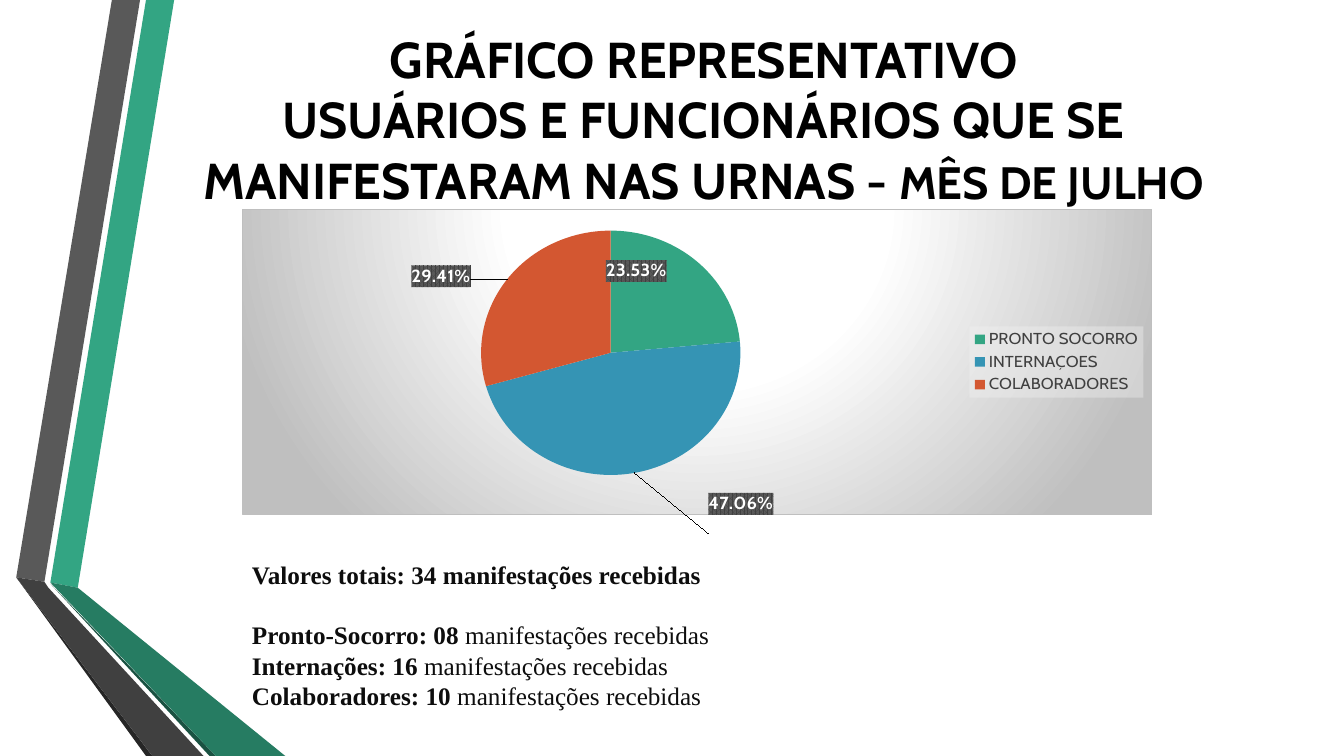
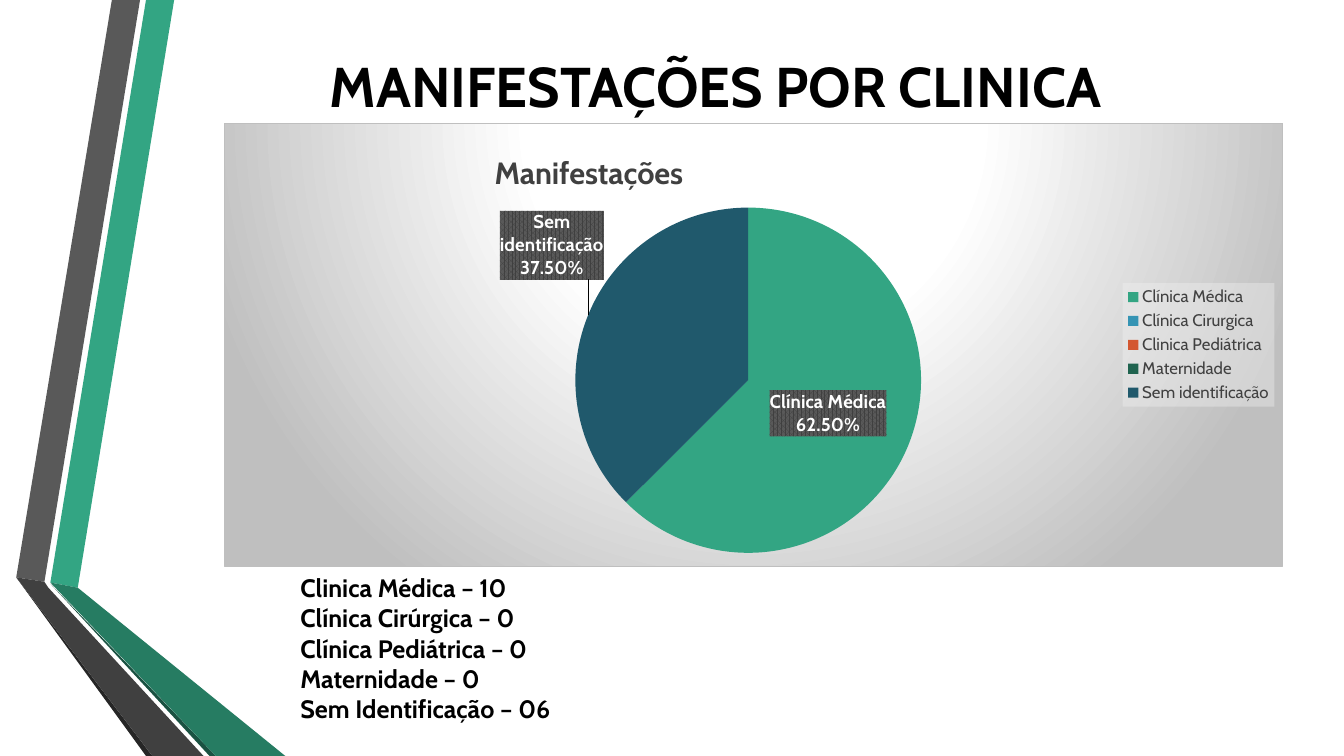
import copy
from dataclasses import dataclass

import pptx
import pptx.chart.data
import pptx.dml.color
import pptx.enum.chart
import pptx.enum.text
import pptx.oxml
import pptx.oxml.ns
import pptx.util

Cm = pptx.util.Cm
Pt = pptx.util.Pt
qn = pptx.oxml.ns.qn
NS = pptx.oxml.ns.nsdecls("c", "a")
ALIGN = pptx.enum.text.PP_ALIGN


@dataclass(frozen=True)
class Theme:
    """Colours, fonts and type sizes of the deck."""
    font: str = "Cabin"
    serif: str = "Times New Roman"
    black: str = "000000"
    ink: str = "0D0D0D"
    grey: str = "404040"
    white: str = "FFFFFF"
    silver: str = "BFBFBF"
    legend_back: str = "F2F2F2"
    label_back: str = "595959"
    slices: tuple = ("33A583", "3594B4", "D35731", "1F634F", "20596C")
    title: float = 40
    long_title: float = 36
    title_tail: float = 32.4
    chart_title: float = 22
    body: float = 18
    label: float = 13.3
    legend: float = 12
    chart: float = 10


RIBBONS = (
    ("33A583", ((1.27, 14.68), (1.96, 14.81), (4.39, 0), (3.68, 0))),
    ("595959", ((3.53, 0), (2.82, 0), (0.41, 14.55), (1.12, 14.66))),
    ("262626", ((0.41, 14.55), (3.68, 19.05), (3.84, 19.05))),
    ("1A5242", ((1.27, 14.71), (5.28, 19.05), (5.44, 19.05))),
    ("267C62", ((1.27, 14.68), (5.44, 19.05), (7.19, 19.05), (1.96, 14.81))),
    ("404040", ((5.13, 19.05), (1.22, 14.81), (1.12, 14.66), (0.41, 14.55),
                (3.84, 19.05))),
)


def rgb(value):
    """Turn a hex string into a colour."""
    return pptx.dml.color.RGBColor.from_string(value)


def style(font, size, color, name, bold=None):
    """Format a font."""
    font.size, font.name, font.bold = Pt(size), name, bold
    font.color.rgb = rgb(color)


def xml(tag, inner):
    """Build a chart element from its inner XML."""
    return pptx.oxml.parse_xml(f"<c:{tag} {NS}>{inner}</c:{tag}>")


def solid(color, tag="srgbClr", inner=""):
    """Return the XML of a colour."""
    return f'<a:{tag} val="{color}">{inner}</a:{tag}>'


def place(parent, index, x, y, w=None, h=None):
    """Give a chart part a manual layout in fractions of the chart."""
    for old in parent.findall(qn("c:layout")):
        parent.remove(old)
    inner, modes = "", ""
    if w:
        inner = '<c:layoutTarget val="inner"/>'
    if w or parent.tag == qn("c:title"):
        modes = '<c:xMode val="edge"/><c:yMode val="edge"/>'
    sizes = f'<c:w val="{w}"/><c:h val="{h}"/>' if w else ""
    parent.insert(index, xml("layout", f'<c:manualLayout>{inner}{modes}'
                             f'<c:x val="{x}"/><c:y val="{y}"/>{sizes}</c:manualLayout>'))


class Deck:
    """Hold the theme and the current slide, and add elements to it."""

    def __init__(self, theme):
        """Start a widescreen presentation."""
        self.theme = theme
        self.prs = pptx.Presentation()
        self.prs.slide_width, self.prs.slide_height = Cm(33.87), Cm(19.05)
        self.layout = self.prs.slide_layouts[5]
        self.s = None

    def slide(self):
        """Add a slide, decorating the layout the first time."""
        first = self.s is None
        self.s = self.prs.slides.add_slide(self.layout)
        if first:
            self.ribbons()

    def ribbons(self):
        """Draw the folded ribbons and move them to the layout."""
        for i, (color, points) in enumerate(RIBBONS):
            points = [(Cm(x), Cm(y)) for x, y in points]
            builder = self.s.shapes.build_freeform(*points[0])
            builder.add_line_segments(points[1:], close=True)
            sp = builder.convert_to_shape()
            sp.shadow.inherit = False
            sp.fill.solid()
            sp.fill.fore_color.rgb = rgb(color)
            sp.line.fill.background()
            self.layout.shapes.element.insert(2 + i, sp.element)

    def title(self, box, lines, size, tail=""):
        """Fill the title placeholder, with an optional smaller tail."""
        sp = self.s.shapes.title
        sp.left, sp.top, sp.width, sp.height = map(Cm, box)
        tf = sp.text_frame
        tf.word_wrap = True
        tf.auto_size = pptx.enum.text.MSO_AUTO_SIZE.NONE
        tf.vertical_anchor = pptx.enum.text.MSO_ANCHOR.MIDDLE
        p = tf.paragraphs[0]
        p.alignment = ALIGN.CENTER
        style(p.font, size, self.theme.black, self.theme.font, True)
        for i, line in enumerate(lines):
            if i:
                p.add_line_break()
            p.add_run().text = line
        if tail:
            r = p.add_run()
            r.text = tail
            r.font.size = Pt(self.theme.title_tail)

    def text(self, box, rows, color, name, align=ALIGN.LEFT, lead_gap=0):
        """Add rows of bold text, each with an optional plain ending."""
        tf = self.s.shapes.add_textbox(*map(Cm, box)).text_frame
        tf.word_wrap = True
        for i, (strong, plain) in enumerate(rows):
            p = tf.add_paragraph() if i else tf.paragraphs[0]
            p.alignment = align
            p.space_after = Pt(0 if i else lead_gap)
            style(p.font, self.theme.body, color, name, True)
            p.add_run().text = strong
            if plain:
                r = p.add_run()
                r.text = plain
                r.font.bold = False

    def pie(self, box, name, data, plot_box, offsets, title_at=None):
        """Add a pie chart; offsets move its labels, None hides one."""
        t = self.theme
        cd = pptx.chart.data.CategoryChartData()
        cd.categories = list(data)
        cd.add_series(name, list(data.values()))
        kinds = pptx.enum.chart
        chart = self.s.shapes.add_chart(kinds.XL_CHART_TYPE.PIE, *map(Cm, box), cd).chart
        style(chart.font, t.chart, t.black, t.font)
        chart.has_title = title_at is not None
        if title_at:
            tf = chart.chart_title.text_frame
            tf.text = name
            style(tf.paragraphs[0].runs[0].font, t.chart_title, t.grey, t.font, True)
            place(chart.element.xpath(".//c:title")[0], 1, *title_at)
        chart.has_legend = True
        chart.legend.position = kinds.XL_LEGEND_POSITION.RIGHT
        chart.legend.include_in_layout = False
        style(chart.legend.font, t.legend, t.grey, t.font)
        plot = chart.plots[0]
        plot.vary_by_categories = True
        for i, color in enumerate(t.slices[:len(data)]):
            fill = plot.series[0].points[i].format.fill
            fill.solid()
            fill.fore_color.rgb = rgb(color)
        place(chart.element.xpath(".//c:plotArea")[0], 0, *plot_box)
        self.chart_back(chart)
        self.labels(plot.series[0], chart, offsets, title_at is not None)

    def chart_back(self, chart):
        """Paint the chart area and the legend."""
        t = self.theme
        stops = "".join(f'<a:gs pos="{pos}000">{solid(color)}</a:gs>' for pos, color in
                        ((0, t.white), (39, t.white), (100, t.silver)))
        area = (f'<a:gradFill><a:gsLst>{stops}</a:gsLst><a:path path="circle">'
                '<a:fillToRect l="50000" t="-80000" r="50000" b="180000"/></a:path>'
                f'</a:gradFill><a:ln w="9525"><a:solidFill>{solid(t.silver)}'
                '</a:solidFill></a:ln>')
        faint = solid(t.legend_back, inner='<a:alpha val="39000"/>')
        for route, inner in (("./c:txPr", area),
                             (".//c:legend/c:txPr", f"<a:solidFill>{faint}</a:solidFill>")):
            chart.element.xpath(route)[0].addprevious(xml("spPr", inner))

    def labels(self, series, chart, offsets, with_category):
        """Format the slice labels and move or hide single ones."""
        t = self.theme
        labels = series.data_labels
        style(labels.font, t.label, t.white, t.font, True)
        labels.number_format = "0.00%"
        labels.number_format_is_linked = False
        labels.position = pptx.enum.chart.XL_LABEL_POSITION.CENTER
        labels.show_value = False
        labels.show_percentage = True
        labels.show_category_name = with_category
        group = chart.element.xpath(".//c:ser/c:dLbls")[0]
        group.find(qn("c:txPr")).addprevious(xml(
            "spPr", f'<a:pattFill prst="pct75"><a:fgClr>{solid(t.grey)}</a:fgClr>'
            f'<a:bgClr>{solid(t.label_back)}</a:bgClr></a:pattFill>'))
        group.find(qn("c:showBubbleSize")).addnext(xml("separator", "\n"))
        shared = [e for e in group if e.tag != qn("c:showLeaderLines")]
        for i, (point, offset) in enumerate(offsets.items()):
            label = xml("dLbl", f'<c:idx val="{point}"/>')
            if offset is None:
                label.append(xml("delete", ""))
                label[-1].set("val", "1")
            else:
                label.extend(copy.deepcopy(e) for e in shared)
                place(label, 1, *offset)
            group.insert(i, label)


def main():
    """Build both slides and save them."""
    theme = Theme()
    deck = Deck(theme)

    deck.slide()
    deck.title((3.1, 0.71, 29.26, 4.55),
               ("GRÁFICO REPRESENTATIVO",
                "USUÁRIOS E FUNCIONÁRIOS QUE SE MANIFESTARAM NAS URNAS - "),
               theme.long_title, "MÊS DE JULHO")
    deck.pie((6.1, 5.26, 22.94, 8.18), "Series 1",
             {"PRONTO SOCORRO": 23.53, "INTERNAÇOES": 47.06, "COLABORADORES": 29.41},
             (0.26, 0.07, 0.29, 0.8),
             {0: (-0.02, -0.12), 1: (0.13, 0.43), 2: (-0.13, -0.13)})
    deck.text((6.1, 13.97, 22.94, 4.11),
              (("Valores totais: 34 manifestações recebidas", ""),
               ("Pronto-Socorro: 08", " manifestações recebidas"),
               ("Internações: 16 ", "manifestações recebidas"),
               ("Colaboradores: 10 ", "manifestações recebidas")),
              theme.ink, theme.serif, ALIGN.JUSTIFY, lead_gap=21.5)

    deck.slide()
    deck.title((4.11, 0.69, 27.84, 2.92), ("MANIFESTAÇÕES POR CLINICA",), theme.title)
    deck.pie((5.64, 3.1, 26.7, 11.18), "Manifestações",
             {"Clínica Médica": 62.5, "Clínica Cirurgica": 0, "Clinica Pediátrica": 0,
              "Maternidade": 0, "Sem identificação": 37.5},
             (0.33, 0.19, 0.33, 0.78),
             {1: None, 2: None, 3: None, 4: (-0.11, -0.23)}, title_at=(0.25, 0.05))
    deck.text((7.32, 14.3, 21.44, 4.5),
              [(row, "") for row in ("Clinica Médica – 10", "Clínica Cirúrgica – 0",
                                     "Clínica Pediátrica – 0", "Maternidade – 0",
                                     "Sem Identificação – 06")],
              theme.black, theme.font)

    deck.prs.save("out.pptx")


if __name__ == "__main__":
    main()
